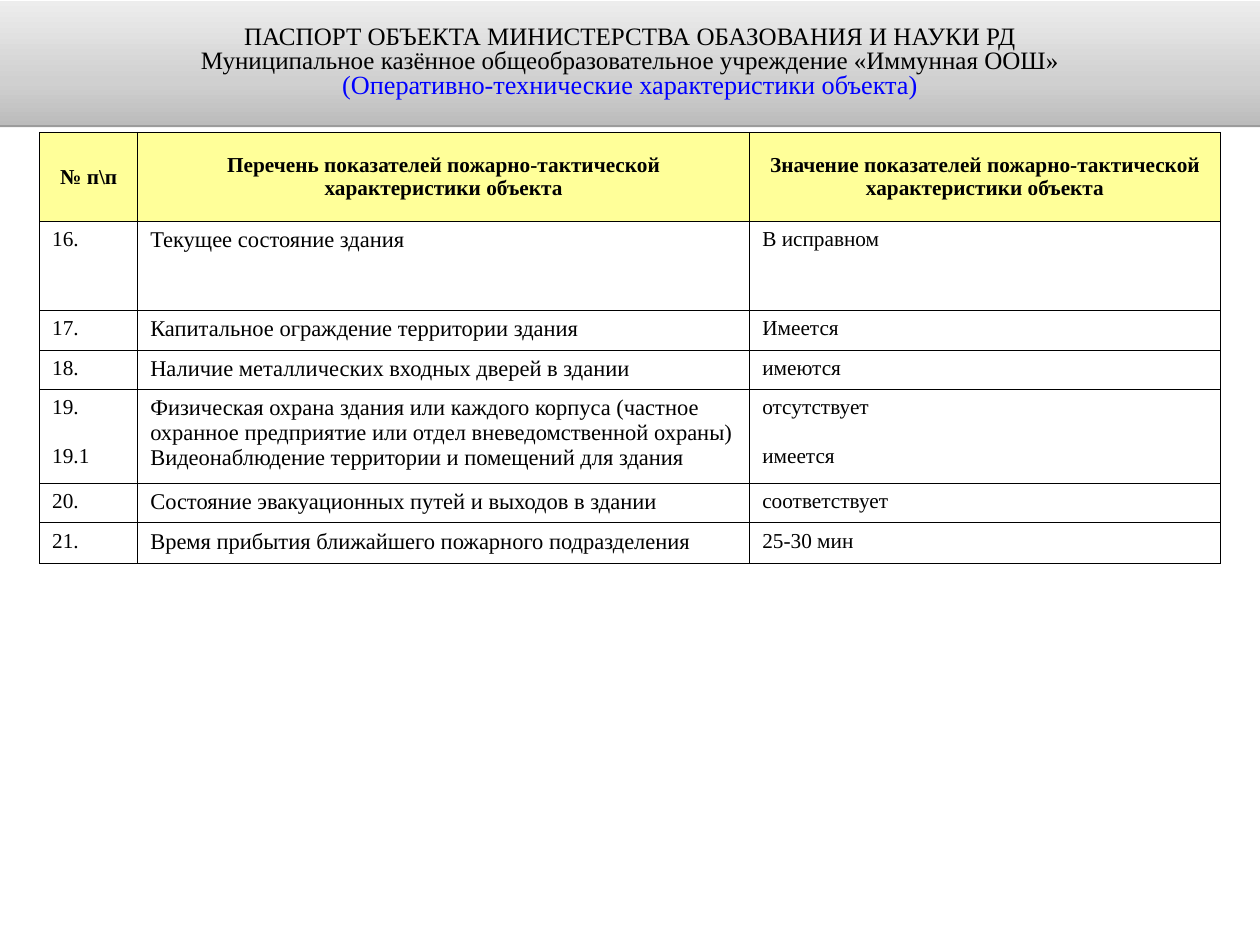
import pptx
import pptx.dml.color
import pptx.enum.shapes
import pptx.enum.text
import pptx.oxml
import pptx.oxml.ns
import pptx.util
from pptx.util import Inches

FONT = "Times New Roman"
COLORS = {"text": "000000", "note": "0000FF", "head": "FFFF99", "body": "FFFFFF",
          "line": "000000", "shade": "000000"}
GRAD = [(0, "BCBCBC"), (35, "D0D0D0"), (100, "EDEDED")]

TITLE = [
    ("ПАСПОРТ ОБЪЕКТА МИНИСТЕРСТВА ОБАЗОВАНИЯ И НАУКИ РД", 20, "text"),
    ("Муниципальное казённое общеобразовательное учреждение «Иммунная ООШ»", 20, "text"),
    ("(Оперативно-технические характеристики объекта)", 21, "note"),
]
# Each cell is a list of paragraphs
ROWS = [
    (["№ п\\п"],
     ["Перечень показателей пожарно-тактической характеристики объекта"],
     ["Значение показателей пожарно-тактической характеристики объекта"]),
    (["16."], ["Текущее состояние здания"], ["В исправном"]),
    (["17."], ["Капитальное ограждение территории здания"], ["Имеется"]),
    (["18."], ["Наличие металлических входных дверей в здании"], ["имеются"]),
    (["19.", "19.1"],
     ["Физическая охрана здания или каждого корпуса (частное охранное предприятие "
      "или отдел вневедомственной охраны)",
      "Видеонаблюдение территории и помещений для здания"],
     ["отсутствует", "имеется"]),
    (["20."], ["Состояние эвакуационных путей и выходов в здании"], ["соответствует"]),
    (["21."], ["Время прибытия ближайшего пожарного подразделения"], ["25-30 мин"]),
]
WIDTHS = [1.09, 6.8, 5.23]
HEIGHTS = [0.99, 0.99, 0.44, 0.44, 1.04, 0.44, 0.45]
SIZES = [17, 18, 17]
GAP = 19.5  # one line of 17 pt text

NS = pptx.oxml.ns.nsdecls("a")
CENTER = pptx.enum.text.PP_ALIGN.CENTER
MIDDLE = pptx.enum.text.MSO_ANCHOR.MIDDLE


def rgb(name):
    return pptx.dml.color.RGBColor.from_string(COLORS[name])


def write(para, text, size, color="text", bold=False):
    para.text = text
    font = para.font
    font.name, font.size, font.bold = FONT, pptx.util.Pt(size), bold
    font.color.rgb = rgb(color)


def pad(box, side, top):
    box.margin_left = box.margin_right = Inches(side)
    box.margin_top = box.margin_bottom = Inches(top)


def border(cell):
    props = cell._tc.get_or_add_tcPr()
    for side in "LRTB":
        props.append(pptx.oxml.parse_xml(
            f'<a:ln{side} {NS} w="12700"><a:solidFill><a:srgbClr val="{COLORS["line"]}"/>'
            f'</a:solidFill></a:ln{side}>'))


def add_grid(slide):
    grid = slide.shapes.add_table(len(ROWS), len(WIDTHS), Inches(0.44), Inches(1.47),
                                  Inches(sum(WIDTHS)), Inches(sum(HEIGHTS))).table
    for col, width in zip(grid.columns, WIDTHS):
        col.width = Inches(width)
    for row, height in zip(grid.rows, HEIGHTS):
        row.height = Inches(height)
    for r, row in enumerate(ROWS):
        head = r == 0
        for c, lines in enumerate(row):
            cell = grid.cell(r, c)
            border(cell)
            pad(cell, 0.14, 0.07)
            cell.fill.solid()
            cell.fill.fore_color.rgb = rgb("head" if head else "body")
            if head:
                cell.vertical_anchor = MIDDLE
            frame = cell.text_frame
            for i, line in enumerate(lines):
                para = frame.add_paragraph() if i else frame.paragraphs[0]
                write(para, line, 17 if head else SIZES[c], bold=head)
                if head:
                    para.alignment = CENTER
                if i and c != 1:
                    para.space_before = pptx.util.Pt(GAP)


def add_banner(slide):
    bar = slide.shapes.add_shape(pptx.enum.shapes.MSO_SHAPE.RECTANGLE,
                                 0, Inches(0.01), Inches(14), Inches(1.38))
    bar.line.fill.background()
    stops = "".join(f'<a:gs pos="{pos * 1000}"><a:srgbClr val="{color}"/></a:gs>'
                    for pos, color in GRAD)
    props = bar._element.spPr
    props.find(pptx.oxml.ns.qn("a:prstGeom")).addnext(pptx.oxml.parse_xml(
        f'<a:gradFill {NS} rotWithShape="1"><a:gsLst>{stops}</a:gsLst>'
        '<a:lin ang="16200000" scaled="1"/></a:gradFill>'))
    props.append(pptx.oxml.parse_xml(
        f'<a:effectLst {NS}><a:outerShdw blurRad="0" dist="20000" dir="5400000" '
        f'rotWithShape="0"><a:srgbClr val="{COLORS["shade"]}"><a:alpha val="38000"/>'
        '</a:srgbClr></a:outerShdw></a:effectLst>'))
    frame = bar.text_frame
    frame.word_wrap = True
    frame.vertical_anchor = MIDDLE
    pad(frame, 0.12, 0.06)
    for i, (text, size, color) in enumerate(TITLE):
        para = frame.add_paragraph() if i else frame.paragraphs[0]
        write(para, text, size, color)
        para.alignment = CENTER
        para.line_spacing = 0.8


def main():
    deck = pptx.Presentation()
    deck.slide_width, deck.slide_height = Inches(14), Inches(10.5)
    slide = deck.slides.add_slide(deck.slide_layouts[6])
    add_grid(slide)
    add_banner(slide)
    deck.save("out.pptx")


if __name__ == "__main__":
    main()
